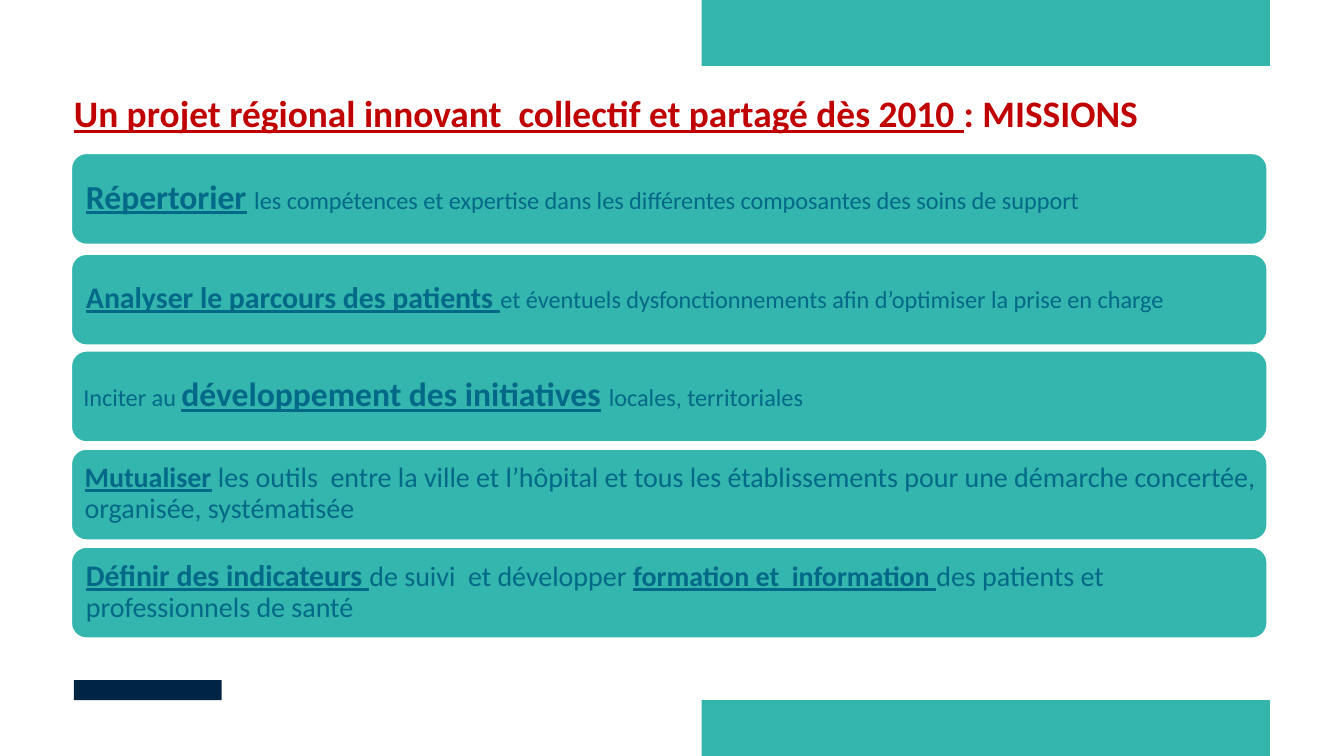
import pptx
import pptx.dml.color
import pptx.enum.shapes
import pptx.enum.text
import pptx.util
from dataclasses import dataclass

Inches = pptx.util.Inches
Shape = pptx.enum.shapes.MSO_SHAPE
Anchor = pptx.enum.text.MSO_ANCHOR

TEAL, CARD, NAVY = "34B5AC", "34B5AD", "002544"
BLUE, RED, WHITE = "006988", "C00000", "FEFFFE"
PAD = 0.03


@dataclass
class Run:
    text: str
    size: float
    bold: bool = False
    under: bool = False


@dataclass
class Band:
    left: float
    top: float
    width: float
    height: float
    fill: str


@dataclass
class Mission:
    top: float
    inset: float
    runs: list[Run]


BANDS = [
    Band(5.22, 0, 4.23, 0.49, TEAL),
    Band(5.22, 5.21, 4.23, 0.42, TEAL),
    Band(0.55, 5.06, 1.1, 0.15, NAVY),
]

HEADING = [
    Run("Un projet régional innovant  collectif et partagé dès 2010 ", 20, True, True),
    Run(": MISSIONS", 20, True),
]

MISSIONS = [
    Mission(1.14, 0.07, [
        Run("Répertorier", 18, True, True),
        Run(" ", 18),
        Run("les compétences et expertise dans les différentes composantes des soins de support", 13),
    ]),
    Mission(1.89, 0.07, [
        Run("Analyser le parcours des patients ", 16, True, True),
        Run("et éventuels dysfonctionnements afin d’optimiser la prise en charge", 13),
    ]),
    Mission(2.61, 0.05, [
        Run("Inciter au ", 13),
        Run("développement des initiatives", 18, True, True),
        Run(" ", 18),
        Run("locales, territoriales", 13),
    ]),
    Mission(3.34, 0.06, [
        Run("Mutualiser", 15, True, True),
        Run(" les outils  entre la ville et l’hôpital et tous les établissements "
            "pour une démarche concertée, organisée, systématisée", 15),
    ]),
    Mission(4.07, 0.07, [
        Run("Définir des indicateurs ", 16, True, True),
        Run("de suivi  et développer ", 15),
        Run("formation et  information ", 15, True, True),
        Run("des patients et professionnels de santé", 15),
    ]),
]


def color(code: str) -> pptx.dml.color.RGBColor:
    return pptx.dml.color.RGBColor.from_string(code)


def assign(target, values: dict) -> None:
    for name, value in values.items():
        setattr(target, name, value)


def paint(target, code: str) -> None:
    target.fill.solid()
    target.fill.fore_color.rgb = color(code)


def block(slide, kind, band: Band):
    shape = slide.shapes.add_shape(kind, *map(Inches, (band.left, band.top, band.width, band.height)))
    shape.shadow.inherit = False
    paint(shape, band.fill)
    shape.line.fill.background()
    return shape


def write(frame, runs: list[Run], code: str, inset: float, anchor) -> None:
    sides = ("margin_left", "margin_right", "margin_top", "margin_bottom")
    assign(frame, {side: Inches(inset) for side in sides})
    assign(frame, {"word_wrap": True, "vertical_anchor": anchor,
                   "auto_size": pptx.enum.text.MSO_AUTO_SIZE.NONE})
    para = frame.paragraphs[0]
    assign(para, {"alignment": pptx.enum.text.PP_ALIGN.LEFT, "line_spacing": 0.9})
    for item in runs:
        run = para.add_run()
        run.text = item.text
        assign(run.font, {"name": "Calibri", "size": pptx.util.Pt(item.size),
                          "bold": item.bold, "underline": item.under})
        run.font.color.rgb = color(code)


def draw(slide, task: Mission) -> None:
    card = block(slide, Shape.ROUNDED_RECTANGLE, Band(0.53, task.top, 8.9, 0.68, CARD))
    card.line.color.rgb = color(WHITE)
    card.line.width = pptx.util.Pt(1)
    label = slide.shapes.add_textbox(*map(Inches, (0.57, task.top + PAD, 8.84, 0.61)))
    write(label.text_frame, task.runs, BLUE, task.inset, Anchor.MIDDLE)


def main() -> None:
    deck = pptx.Presentation()
    # Widescreen 16:9
    assign(deck, {"slide_width": Inches(10), "slide_height": Inches(10) * 9 // 16})
    slide = deck.slides.add_slide(deck.slide_layouts[5])
    paint(slide.background, WHITE)

    # Decorative bands
    for band in BANDS:
        block(slide, Shape.RECTANGLE, band)

    # Title
    title = slide.shapes.title
    assign(title, {"left": Inches(0.55), "top": Inches(0.71),
                   "width": Inches(8.9), "height": Inches(0.58)})
    write(title.text_frame, HEADING, RED, 0, Anchor.TOP)

    # Mission cards
    for task in MISSIONS:
        draw(slide, task)

    deck.save("out.pptx")


if __name__ == "__main__":
    main()
